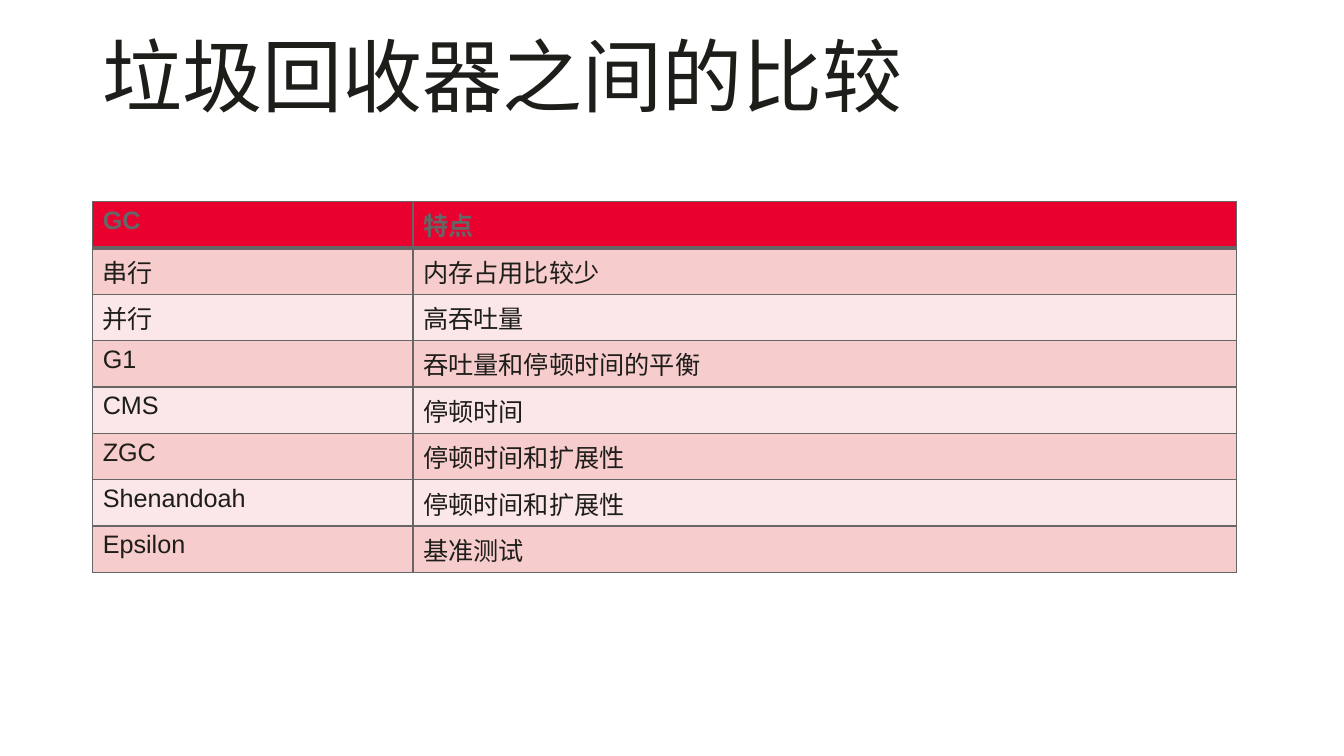
from pptx import Presentation
from pptx.dml.color import RGBColor
from pptx.enum.text import MSO_ANCHOR
from pptx.oxml.ns import qn
from pptx.util import Inches, Pt
from lxml import etree

TOP = MSO_ANCHOR.TOP
INK = RGBColor(0x1D, 0x1D, 0x1A)
GREY = RGBColor(0x66, 0x66, 0x66)
RED = RGBColor(0xE9, 0x00, 0x2F)
PINK = RGBColor(0xF7, 0xCC, 0xCD)
PALE_PINK = RGBColor(0xFB, 0xE7, 0xE8)
FONT = "Arial"

LEFT = Inches(0.92)
COL_WIDTHS = (3.18, 8.17)
ROW_HEIGHT = 0.46
COLLECTORS = [
    ("GC", "特点"),
    ("串行", "内存占用比较少"),
    ("并行", "高吞吐量"),
    ("G1", "吞吐量和停顿时间的平衡"),
    ("CMS", "停顿时间"),
    ("ZGC", "停顿时间和扩展性"),
    ("Shenandoah", "停顿时间和扩展性"),
    ("Epsilon", "基准测试"),
]


def set_font(p, size, color, bold=False):
    p.font.name = FONT
    p.font.size = Pt(size)
    p.font.color.rgb = color
    p.font.bold = bold


def add_title(s, text):
    tf = s.shapes.add_textbox(LEFT, Inches(0.4), Inches(11.5), Inches(1.45)).text_frame
    tf.word_wrap = True
    tf.vertical_anchor = TOP
    p = tf.paragraphs[0]
    p.text = text
    p.line_spacing = 0.8
    set_font(p, 57.2, INK)


def set_borders(cell, widths):
    """Draw grey borders; widths maps a side (L, R, T, B) to points."""
    tcPr = cell._tc.get_or_add_tcPr()
    for i, (side, width) in enumerate(widths.items()):
        ln = etree.Element(qn(f"a:ln{side}"), w=str(Pt(width)))
        fill = etree.SubElement(ln, qn("a:solidFill"))
        etree.SubElement(fill, qn("a:srgbClr"), val=str(GREY))
        tcPr.insert(i, ln)


def fill_cell(cell, text, row):
    header = row == 0
    cell.text = text
    set_font(cell.text_frame.paragraphs[0], 18, GREY if header else INK, header)
    cell.fill.solid()
    cell.fill.fore_color.rgb = RED if header else PINK if row % 2 else PALE_PINK
    set_borders(cell, {"L": 1, "R": 1, "T": 3 if row == 1 else 1, "B": 3 if header else 1})


def add_collector_table(s, rows):
    table = s.shapes.add_table(
        len(rows), len(COL_WIDTHS), LEFT, Inches(2),
        Inches(sum(COL_WIDTHS)), Inches(ROW_HEIGHT * len(rows)),
    ).table
    for column, width in zip(table.columns, COL_WIDTHS):
        column.width = Inches(width)
    for r, texts in enumerate(rows):
        table.rows[r].height = Inches(ROW_HEIGHT)
        for c, text in enumerate(texts):
            fill_cell(table.cell(r, c), text, r)


def main():
    prs = Presentation()
    prs.slide_width, prs.slide_height = Inches(13.34), Inches(7.5)
    s = prs.slides.add_slide(prs.slide_layouts[6])
    add_title(s, "垃圾回收器之间的比较")
    add_collector_table(s, COLLECTORS)
    prs.save("out.pptx")


if __name__ == "__main__":
    main()
